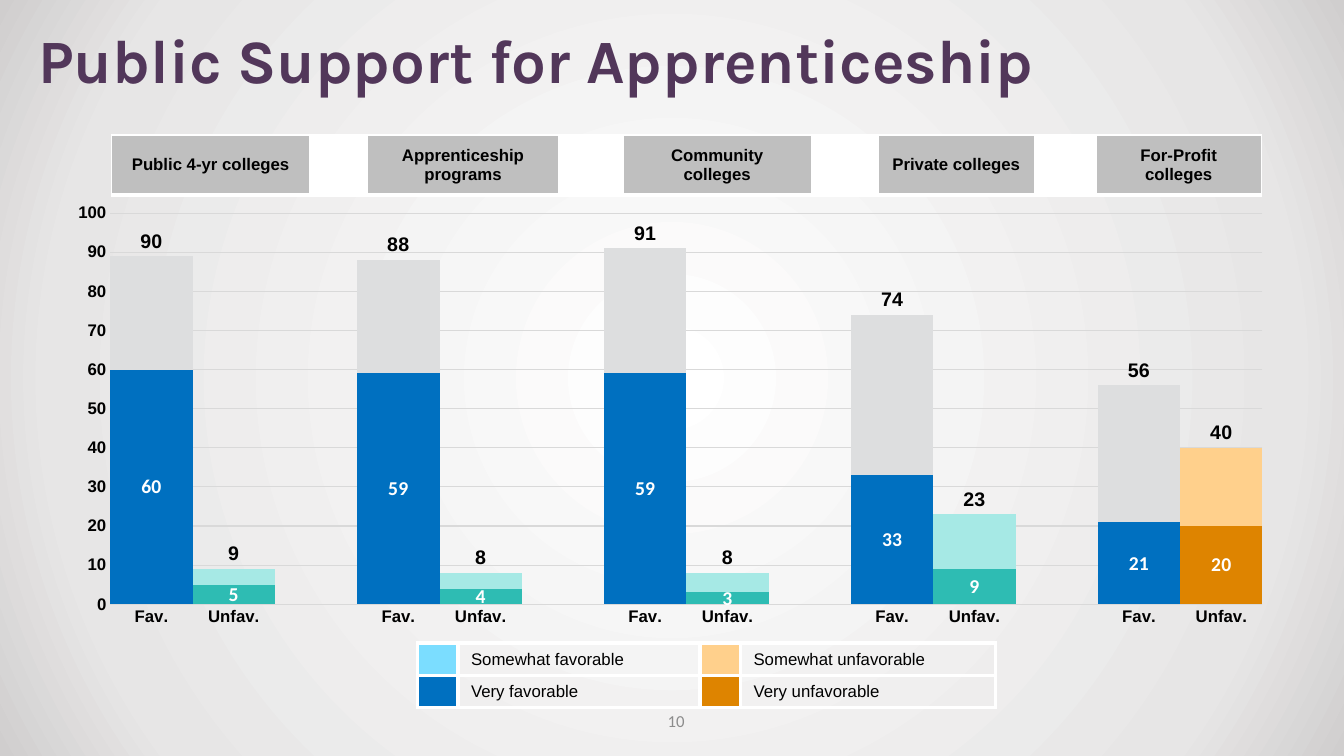
from lxml import etree
from pptx import Presentation
from pptx.chart.data import CategoryChartData
from pptx.dml.color import RGBColor
from pptx.enum.chart import XL_CHART_TYPE, XL_LABEL_POSITION, XL_TICK_MARK
from pptx.enum.text import MSO_ANCHOR, PP_ALIGN
from pptx.oxml import parse_xml
from pptx.oxml.ns import nsdecls, qn
from pptx.util import Cm, Pt

STACKED = XL_CHART_TYPE.COLUMN_STACKED
LABEL_CENTER, LABEL_BASE = XL_LABEL_POSITION.CENTER, XL_LABEL_POSITION.INSIDE_BASE
NO_TICK = XL_TICK_MARK.NONE
MIDDLE = MSO_ANCHOR.MIDDLE
LEFT, CENTER = PP_ALIGN.LEFT, PP_ALIGN.CENTER

WHITE = RGBColor(0xFF, 0xFF, 0xFF)
BLACK = RGBColor(0x00, 0x00, 0x00)
PURPLE = RGBColor(0x52, 0x37, 0x5A)
PAGE_GRAY = RGBColor(0x8C, 0x8C, 0x8C)
HEADER_GRAY = RGBColor(0xBF, 0xBF, 0xBF)
GRID_GRAY = RGBColor(0xD9, 0xD9, 0xD9)
BAR_GRAY = RGBColor(0xDD, 0xDE, 0xDF)
BLUE = RGBColor(0x00, 0x70, 0xC0)
SKY = RGBColor(0x7B, 0xDD, 0xFF)
TEAL = RGBColor(0x2E, 0xBC, 0xB3)
MINT = RGBColor(0xA6, 0xE9, 0xE5)
ORANGE = RGBColor(0xDE, 0x84, 0x00)
PEACH = RGBColor(0xFF, 0xD0, 0x8C)
BACKDROP = [(0, WHITE), (81, RGBColor(0xE7, 0xE6, 0xE6)), (100, RGBColor(0xD0, 0xCE, 0xCE))]

# College type: (very favorable, very unfavorable), (somewhat ...), (total ...)
SUPPORT = {
    "Public 4-yr colleges": ((60, 5), (29, 4), (90, 9)),
    "Apprenticeship programs": ((59, 4), (29, 4), (88, 8)),
    "Community colleges": ((59, 3), (32, 5), (91, 8)),
    "Private colleges": ((33, 9), (41, 14), (74, 23)),
    "For-Profit colleges": ((21, 20), (35, 20), (56, 40)),
}
HEADER_WIDTHS = [4.98, 1.47, 4.8, 1.63, 4.75, 1.68, 3.94, 1.55, 4.17]
LEGEND = [
    [(SKY, ""), (None, "Somewhat favorable"), (PEACH, ""), (None, "Somewhat unfavorable")],
    [(BLUE, ""), (None, "Very favorable"), (ORANGE, ""), (None, "Very unfavorable")],
]


def spread(groups):
    """Join the groups with one blank slot between neighbours."""
    slots = []
    for group in groups:
        slots += [*group, None]
    return slots[:-1]


def set_font(font, size, color, name="Arial", bold=False):
    font.size, font.name, font.bold = Pt(size), name, bold
    font.color.rgb = color


class SlideBuilder:
    def __init__(self, prs):
        self.slide = prs.slides.add_slide(prs.slide_layouts[5])

    def backdrop(self, stops):
        self.slide.background.fill.gradient()
        grad = self.slide.element.find(".//" + qn("a:gradFill"))
        gs = "".join(f'<a:gs pos="{pos * 1000}"><a:srgbClr val="{color}"/></a:gs>'
                     for pos, color in stops)
        grad.getparent().replace(grad, parse_xml(
            f'<a:gradFill {nsdecls("a")} rotWithShape="1"><a:gsLst>{gs}</a:gsLst>'
            '<a:path path="circle"><a:fillToRect l="50000" t="50000" r="50000" b="50000"/>'
            '</a:path></a:gradFill>'))

    def add_text(self, tf, text, align, *style):
        tf.word_wrap = True
        p = tf.paragraphs[0]
        p.alignment = align
        r = p.add_run()
        r.text = text
        set_font(r.font, *style)
        return p

    def title(self, text, x, y, w, h):
        sp = self.slide.shapes.title
        sp.left, sp.top, sp.width, sp.height = Cm(x), Cm(y), Cm(w), Cm(h)
        sp.text_frame.vertical_anchor = MIDDLE
        p = self.add_text(sp.text_frame, text, LEFT, 44, PURPLE, "Karla", True)
        p.line_spacing = 0.9

    def page_number(self, text, x, y, w, h):
        tf = self.slide.shapes.add_textbox(Cm(x), Cm(y), Cm(w), Cm(h)).text_frame
        tf.vertical_anchor = MIDDLE
        self.add_text(tf, text, CENTER, 12, PAGE_GRAY, "Calibri")

    def table(self, rows, x, y, widths, row_height, borders, align, bold, pad):
        """Rows hold (fill, text) cells; borders are left, right, top, bottom points."""
        frame = self.slide.shapes.add_table(len(rows), len(widths), Cm(x), Cm(y),
                                            Cm(sum(widths)), Cm(row_height * len(rows)))
        table = frame.table
        table.first_row = table.horz_banding = False
        for col, width in zip(table.columns, widths):
            col.width = Cm(width)
        for i, row in enumerate(rows):
            table.rows[i].height = Cm(row_height)
            for j, (fill, text) in enumerate(row):
                self.cell(table.cell(i, j), fill, text, borders, align, bold, pad)

    def cell(self, cell, fill, text, borders, align, bold, pad):
        cell.vertical_anchor = MIDDLE
        cell.margin_left = cell.margin_right = Cm(0.33)
        cell.margin_top = cell.margin_bottom = Cm(pad)
        if fill is None:
            cell.fill.background()
        else:
            cell.fill.solid()
            cell.fill.fore_color.rgb = fill
        if text:
            self.add_text(cell.text_frame, text, align, 12, BLACK, "Arial", bold)
        for k, (side, width) in enumerate(zip("LRTB", borders)):
            cell._tc.get_or_add_tcPr().insert(k, parse_xml(
                f'<a:ln{side} {nsdecls("a")} w="{Pt(width)}"><a:solidFill>'
                f'<a:srgbClr val="{WHITE}"/></a:solidFill></a:ln{side}>'))

    def chart(self, groups, x, y, w, h):
        data = CategoryChartData()
        data.categories = [name or "" for name in spread([("Fav.", "Unfav.")] * len(groups))]
        for k, values in enumerate(zip(*groups), 1):
            data.add_series(f"Series {k}", spread(values))
        chart = self.slide.shapes.add_chart(STACKED, Cm(x), Cm(y), Cm(w), Cm(h), data).chart
        chart.has_legend = chart.has_title = False
        set_font(chart.font, 10, BLACK, "Calibri")
        self.axes(chart)
        plot = chart.plots[0]
        plot.gap_width, plot.overlap, plot.vary_by_categories = 0, 100, False
        very, somewhat, total = plot.series
        self.color_bars(very, BLUE, TEAL, ORANGE, len(groups))
        self.color_bars(somewhat, BAR_GRAY, MINT, PEACH, len(groups))
        total.format.fill.background()
        self.labels(very, LABEL_CENTER, WHITE, "Calibri")
        self.labels(total, LABEL_BASE, BLACK, "Arial")
        self.plot_area(chart, x=0.046, y=0.04, w=0.934, h=0.892)

    def axes(self, chart):
        cat, val = chart.category_axis, chart.value_axis
        for axis in (cat, val):
            axis.major_tick_mark = axis.minor_tick_mark = NO_TICK
            set_font(axis.tick_labels.font, 12, BLACK, bold=True)
        val.minimum_scale, val.maximum_scale, val.major_unit = 0, 100, 10
        val.format.line.fill.background()
        for line in (cat.format.line, val.major_gridlines.format.line):
            line.color.rgb, line.width = GRID_GRAY, Pt(0.75)

    def color_bars(self, series, favorable, unfavorable, last, count):
        series.format.fill.solid()
        series.format.fill.fore_color.rgb = favorable
        for k in range(count):
            fill = series.points[3 * k + 1].format.fill
            fill.solid()
            fill.fore_color.rgb = last if k == count - 1 else unfavorable

    def labels(self, series, position, color, font):
        labels = series.data_labels
        labels.show_value, labels.position = True, position
        set_font(labels.font, 14, color, font, True)

    def plot_area(self, chart, **box):
        """Fix the inner plot area as fractions of the chart frame."""
        area = chart.element.find(".//" + qn("c:plotArea")) if hasattr(chart, "element") \
            else chart._chartSpace.find(".//" + qn("c:plotArea"))
        for old in area.findall(qn("c:layout")):
            area.remove(old)
        layout = etree.Element(qn("c:layout"))
        manual = etree.SubElement(layout, qn("c:manualLayout"))
        settings = {"layoutTarget": "inner", "xMode": "edge", "yMode": "edge", **box}
        for tag, value in settings.items():
            etree.SubElement(manual, qn("c:" + tag)).set("val", str(value))
        area.insert(0, layout)


def main():
    prs = Presentation()
    prs.slide_width, prs.slide_height = Cm(33.87), Cm(19.05)
    s = SlideBuilder(prs)
    s.backdrop(BACKDROP)
    s.page_number("10", 11.68, 17.65, 10.72, 1.02)
    s.title("Public Support for Apprenticeship", 0.71, 0.13, 31.09, 2.95)
    s.chart(list(SUPPORT.values()), 1.35, 4.93, 31.09, 11.05)
    s.table(LEGEND, 10.52, 16.21, [1.02, 6.1, 1.02, 6.43], 0.81, (3, 3, 3, 3), LEFT, False, 0)
    header = [(HEADER_GRAY, name) if name else (WHITE, "")
              for name in spread([name] for name in SUPPORT)]
    s.table([header], 2.82, 3.4, HEADER_WIDTHS, 1.52, (1, 1, 1, 3), CENTER, True, 0.13)
    prs.save("out.pptx")


if __name__ == "__main__":
    main()
